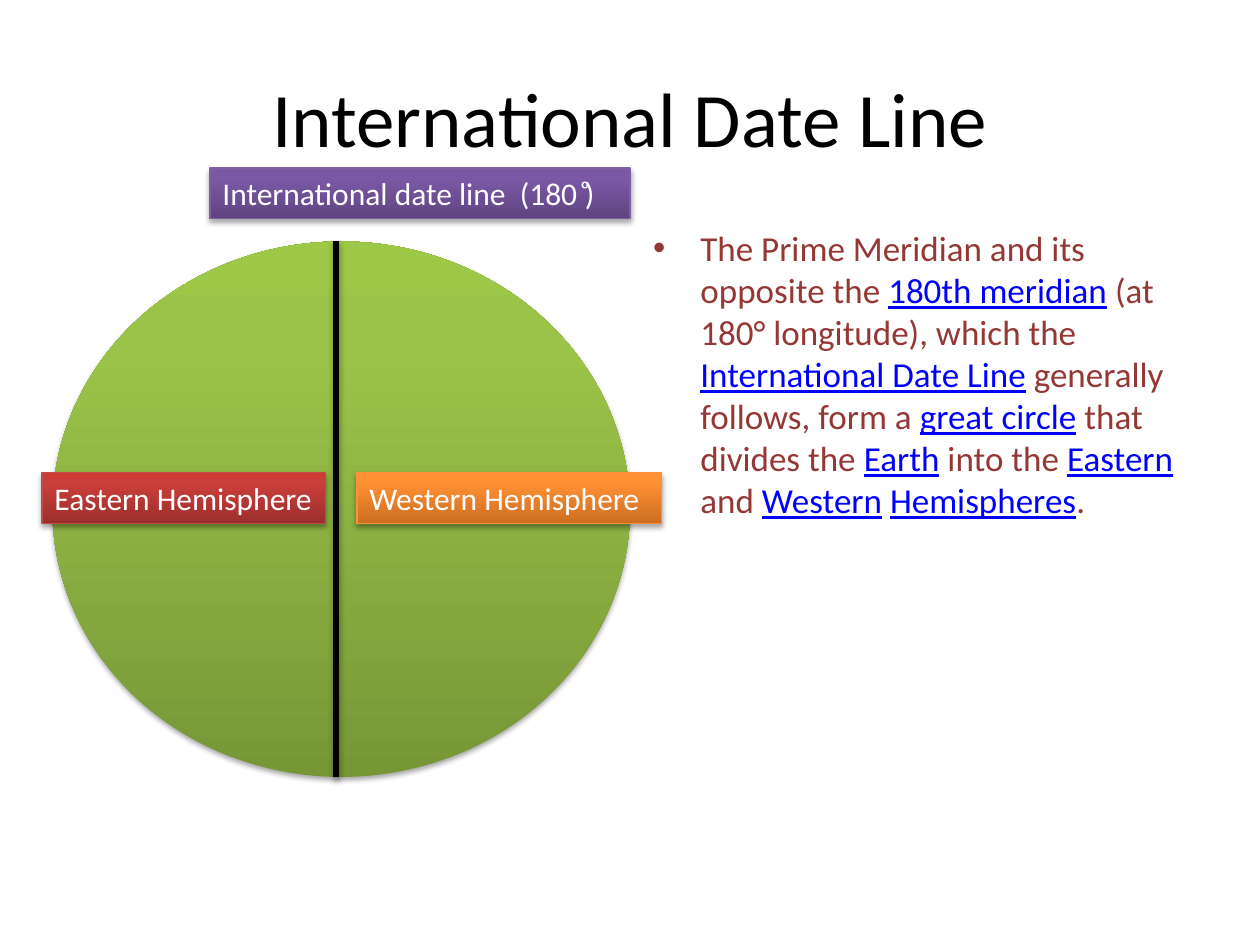
import dataclasses

import lxml.etree
import pptx
import pptx.dml.color
import pptx.enum.shapes
import pptx.enum.text
import pptx.oxml.ns
import pptx.util
import copy

Pt = pptx.util.Pt
FONT = "Calibri"
COLORS = {
    "title": "000000",
    "body": "953735",
    "term": "0000FF",
    "label": "FFFFFF",
    "meridian": "000000",
    "shadow": "000000",
}
GRADIENTS = {
    "green": ("779737", "9BC348", "9DC746"),
    "purple": ("5F4480", "7B58A6", "7C57A8"),
    "orange": ("CC6E20", "FF9034", "FF9136"),
    "red": ("9C2F2D", "CB3E3A", "CE3B37"),
}
BORDERS = {"purple": "7D60A0", "orange": "F69240", "red": "BF4C48"}
STOP_POSITIONS = (0, 0.8, 1)
GLOBE_LEFT, GLOBE_TOP, GLOBE_WIDTH, GLOBE_HEIGHT = 30, 138, 330, 306
MERIDIAN_X = 192
LABEL_HEIGHT = 29


@dataclasses.dataclass
class Label:
    text: str
    left: float
    top: float
    width: float
    color: str


LABELS = [
    Label("International date line  (180 ͦ)", 120, 96, 240, "purple"),
    Label("Western Hemisphere", 204, 270, 174, "orange"),
    Label("Eastern Hemisphere", 24, 270, 162, "red"),
]

BODY_RUNS = [
    ("The Prime Meridian and its opposite the ", "body"),
    ("180th meridian", "term"),
    (" (at 180° longitude), which the ", "body"),
    ("International Date Line", "term"),
    (" generally follows, form a ", "body"),
    ("great circle", "term"),
    (" that divides the ", "body"),
    ("Earth", "term"),
    (" into the ", "body"),
    ("Eastern", "term"),
    (" and ", "body"),
    ("Western", "term"),
    (" ", "body"),
    ("Hemispheres", "term"),
    (".", "body"),
]


def rgb(value: str) -> pptx.dml.color.RGBColor:
    return pptx.dml.color.RGBColor.from_string(value)


def place(shape, left: float, top: float, width: float, height: float) -> None:
    shape.left, shape.top = Pt(left), Pt(top)
    shape.width, shape.height = Pt(width), Pt(height)


def format_run(run, size: float, color: str) -> None:
    run.font.name = FONT
    run.font.size = Pt(size)
    run.font.color.rgb = rgb(COLORS[color])


def add_shadow(shape) -> None:
    properties = shape._element.spPr
    tag = pptx.oxml.ns.qn
    effects = lxml.etree.SubElement(properties, tag("a:effectLst"))
    shadow = lxml.etree.SubElement(
        effects, tag("a:outerShdw"), blurRad=str(Pt(3.1)), dist=str(Pt(1.8)),
        dir="5400000", rotWithShape="0")
    color = lxml.etree.SubElement(shadow, tag("a:srgbClr"), val=COLORS["shadow"])
    lxml.etree.SubElement(color, tag("a:alpha"), val="35000")


def fill_gradient(shape, name: str) -> None:
    shape.fill.gradient()
    shape.fill.gradient_angle = 90
    stop_list = next(shape._element.spPr.iter(pptx.oxml.ns.qn("a:gsLst")))
    stop_list.append(copy.deepcopy(stop_list[-1]))
    stops = zip(shape.fill.gradient_stops, STOP_POSITIONS, GRADIENTS[name])
    for stop, position, color in stops:
        stop.position = position
        stop.color.rgb = rgb(color)


def add_globe(slide) -> None:
    globe = slide.shapes.add_shape(
        pptx.enum.shapes.MSO_SHAPE.OVAL, Pt(GLOBE_LEFT), Pt(GLOBE_TOP),
        Pt(GLOBE_WIDTH), Pt(GLOBE_HEIGHT))
    fill_gradient(globe, "green")
    globe.line.fill.background()
    add_shadow(globe)

    meridian = slide.shapes.add_connector(
        pptx.enum.shapes.MSO_CONNECTOR.STRAIGHT, Pt(MERIDIAN_X), Pt(GLOBE_TOP),
        Pt(MERIDIAN_X), Pt(GLOBE_TOP + GLOBE_HEIGHT))
    meridian.line.color.rgb = rgb(COLORS["meridian"])
    meridian.line.width = Pt(3)
    add_shadow(meridian)


def add_label(slide, label: Label) -> None:
    shape = slide.shapes.add_shape(
        pptx.enum.shapes.MSO_SHAPE.RECTANGLE, Pt(label.left), Pt(label.top),
        Pt(label.width), Pt(LABEL_HEIGHT))
    fill_gradient(shape, label.color)
    shape.line.color.rgb = rgb(BORDERS[label.color])
    shape.line.width = Pt(0.75)
    add_shadow(shape)
    frame = shape.text_frame
    frame.text = label.text
    frame.word_wrap = True
    frame.auto_size = pptx.enum.text.MSO_AUTO_SIZE.SHAPE_TO_FIT_TEXT
    frame.vertical_anchor = pptx.enum.text.MSO_ANCHOR.TOP
    paragraph = frame.paragraphs[0]
    paragraph.alignment = pptx.enum.text.PP_ALIGN.LEFT
    format_run(paragraph.runs[0], 18, "label")


def write_title(slide) -> None:
    title = slide.shapes.title
    place(title, 36, 21.6, 648, 90)
    title.text_frame.text = "International Date Line"
    format_run(title.text_frame.paragraphs[0].runs[0], 44, "title")


def write_body(slide) -> None:
    body = slide.placeholders[1]
    place(body, 366, 126, 318, 356.4)
    paragraph = body.text_frame.paragraphs[0]
    for text, color in BODY_RUNS:
        run = paragraph.add_run()
        run.text = text
        format_run(run, 20, color)
        run.font.underline = color == "term"


def main() -> None:
    presentation = pptx.Presentation()
    presentation.slide_width, presentation.slide_height = Pt(720), Pt(540)
    slide = presentation.slides.add_slide(presentation.slide_layouts[1])
    write_title(slide)
    write_body(slide)
    add_globe(slide)
    for label in LABELS:
        add_label(slide, label)
    presentation.save("out.pptx")


if __name__ == "__main__":
    main()
